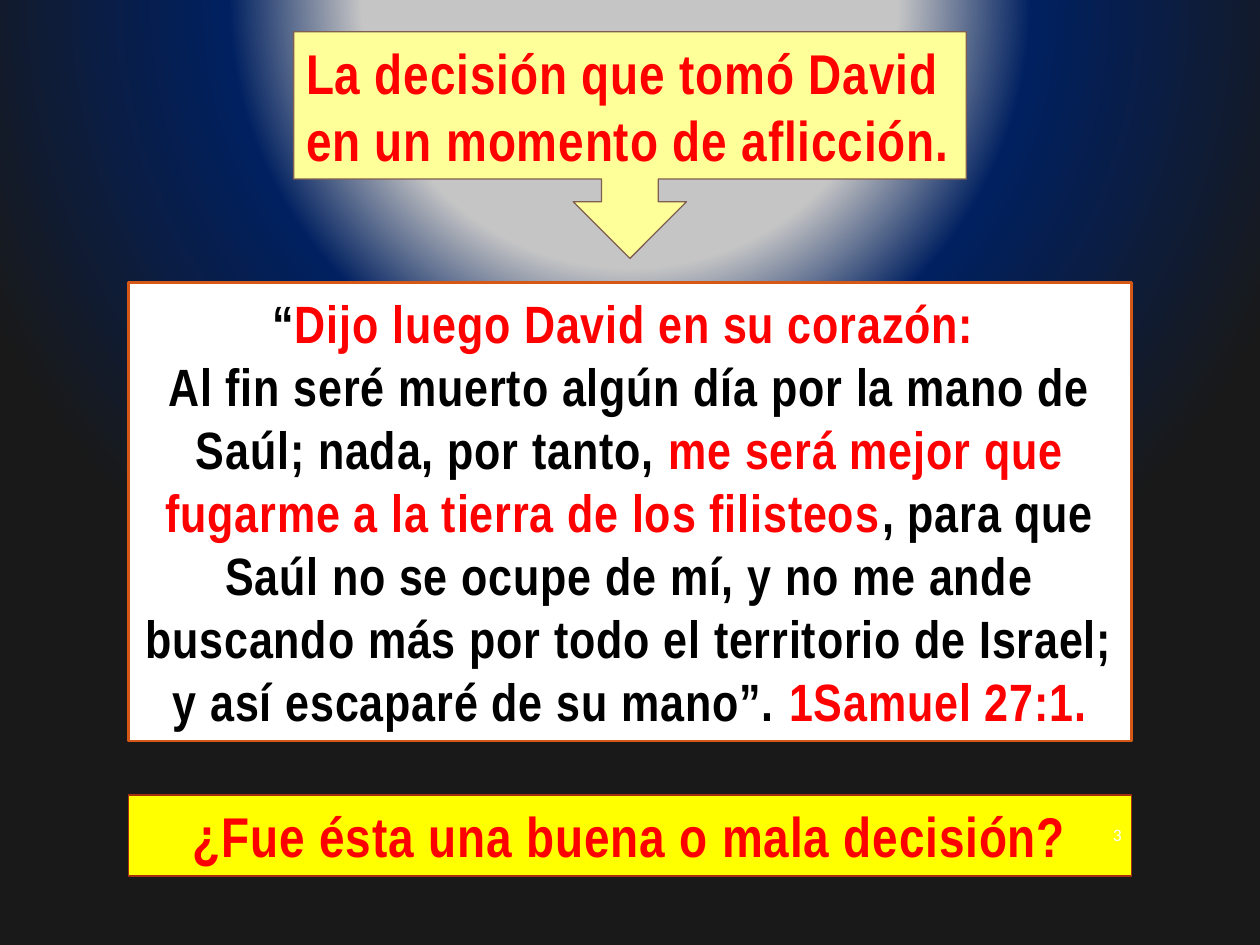
from lxml import etree
from pptx import Presentation
from pptx.dml.color import RGBColor
from pptx.enum.shapes import MSO_SHAPE as Preset
from pptx.enum.text import MSO_ANCHOR as Anchor, MSO_AUTO_SIZE as AutoSize, PP_ALIGN as Align
from pptx.oxml import parse_xml
from pptx.oxml.ns import nsdecls
from pptx.util import Cm, Pt

RED = RGBColor(0xFF, 0x00, 0x00)
BLACK = RGBColor(0x00, 0x00, 0x00)
WHITE = RGBColor(0xFF, 0xFF, 0xFF)
YELLOW = RGBColor(0xFF, 0xFF, 0x00)
PALE_YELLOW = RGBColor(0xFF, 0xFF, 0x99)
BRICK = RGBColor(0xA5, 0x30, 0x0F)
BROWN = RGBColor(0x7F, 0x5F, 0x52)
ORANGE = RGBColor(0xD5, 0x58, 0x16)
GLOW = [(34, RGBColor(0xC5, 0xC5, 0xC5)),
        (51, RGBColor(0x00, 0x20, 0x60)),
        (91, RGBColor(0x19, 0x19, 0x19))]


def add_panel(preset, box, fill, border, border_width):
    panel = slide.shapes.add_shape(preset, *map(Cm, box))
    panel.shadow.inherit = False
    panel.fill.solid()
    panel.fill.fore_color.rgb = fill
    panel.line.color.rgb = border
    panel.line.width = Pt(border_width)
    panel.text_frame.word_wrap = True
    panel.text_frame.vertical_anchor = Anchor.MIDDLE
    return panel


def write(paragraph, align, size, outline, pieces):
    paragraph.alignment = align
    for text, color in pieces:
        run = paragraph.add_run()
        run.text = text
        run.font.name = "Arial Narrow"
        run.font.size = Pt(size)
        run.font.bold = True
        run.font.color.rgb = color
        props = run.font._element
        props.set("spc", "50")
        props.insert(0, parse_xml(
            f'<a:ln {nsdecls("a")} w="{Pt(outline)}"><a:solidFill>'
            f'<a:srgbClr val="{color}"/></a:solidFill></a:ln>'))


prs = Presentation()
prs.slide_width, prs.slide_height = Cm(25.4), Cm(19.05)
slide = prs.slides.add_slide(prs.slide_layouts[6])

background = parse_xml(
    f'<p:bg {nsdecls("p", "a")}><p:bgPr><a:gradFill rotWithShape="1"><a:gsLst/>'
    '<a:path path="circle"><a:fillToRect l="50000" t="-80000" r="50000" b="180000"/></a:path>'
    '</a:gradFill><a:effectLst/></p:bgPr></p:bg>')
stops = background[0][0][0]
for percent, color in GLOW:
    stops.append(parse_xml(
        f'<a:gs {nsdecls("a")} pos="{percent * 1000}"><a:srgbClr val="{color}"/></a:gs>'))
slide._element.cSld.insert(0, background)

question = add_panel(Preset.RECTANGLE, (2.59, 16.03, 20.22, 1.63), YELLOW, BRICK, 0.75)
question.text_frame.auto_size = AutoSize.SHAPE_TO_FIT_TEXT
write(question.text_frame.paragraphs[0], Align.CENTER, 32, 0.25,
      [("¿Fue ésta una buena o mala decisión?", RED)])

heading = add_panel(Preset.DOWN_ARROW_CALLOUT, (5.92, 0.64, 13.56, 4.57), PALE_YELLOW, BROWN, 0.75)
write(heading.text_frame.paragraphs[0], Align.LEFT, 32, 0.25,
      [("La decisión que tomó David en un momento de aflicción.", RED)])

page_number = slide.shapes.add_textbox(Cm(21.69), Cm(16.31), Cm(1.17), Cm(1.04)).text_frame
page_number.word_wrap = True
page_number.vertical_anchor = Anchor.MIDDLE
page_number.paragraphs[0].alignment = Align.RIGHT
digit = page_number.paragraphs[0].add_run()
digit.text = "3"
digit.font.name = "Calibri"
digit.font.size = Pt(10)
digit.font.color.rgb = WHITE

verse = add_panel(Preset.RECTANGLE, (2.59, 5.69, 20.22, 9.25), WHITE, ORANGE, 1.5).text_frame
verse.auto_size = AutoSize.SHAPE_TO_FIT_TEXT
write(verse.paragraphs[0], Align.CENTER, 30, 0.75, [
    ("“", BLACK),
    ("Dijo luego David en su corazón: ", RED),
])
write(verse.add_paragraph(), Align.CENTER, 30, 0.75, [
    ("Al fin seré muerto algún día por la mano de Saúl; nada, por tanto, ", BLACK),
    ("me será mejor que fugarme a la tierra de los filisteos", RED),
    (", para que Saúl no se ocupe de mí, y no me ande buscando más por todo "
     "el territorio de Israel; y así escaparé de su mano”. ", BLACK),
    ("1Samuel 27:1.", RED),
])

prs.save("out.pptx")
